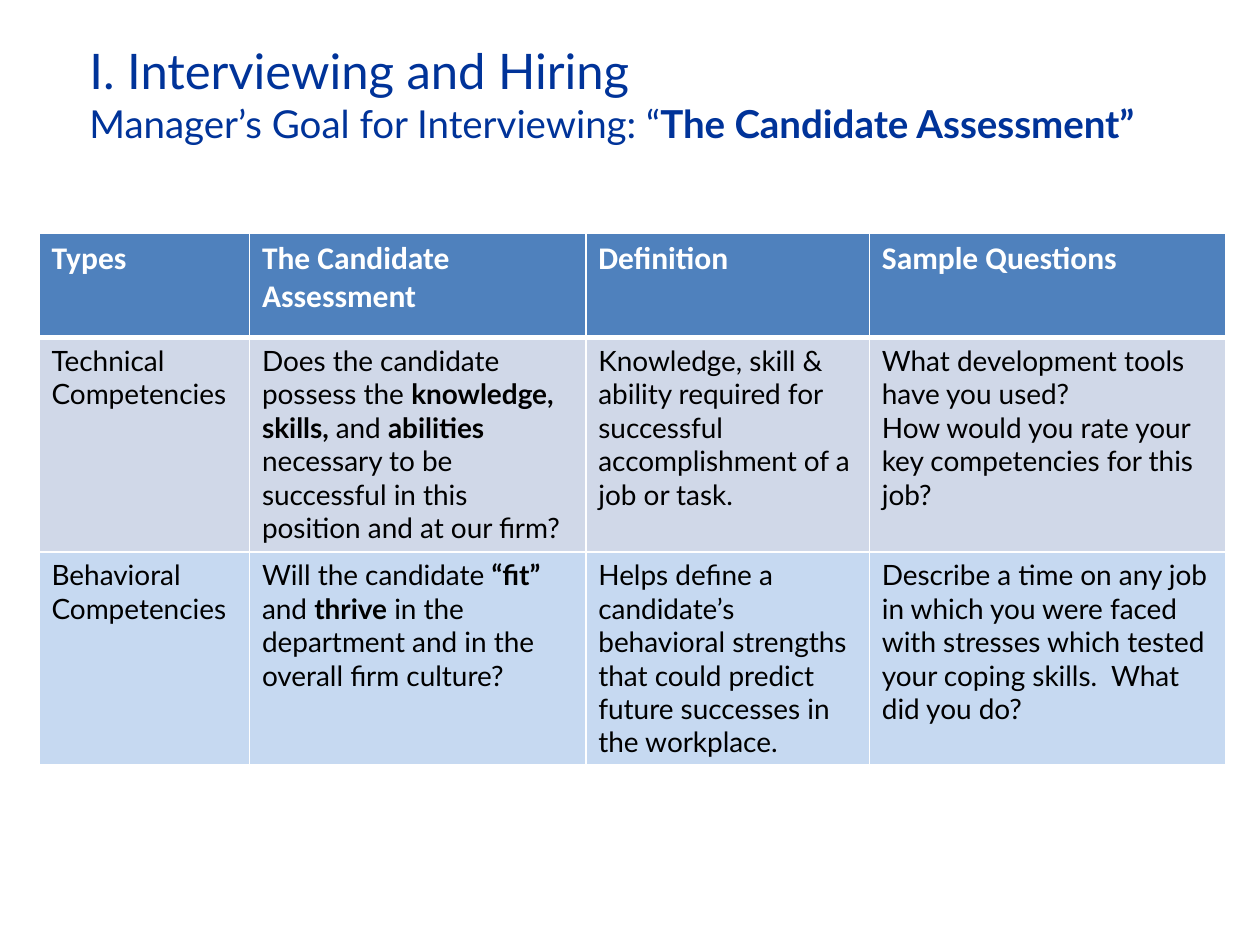
import lxml.etree
import pptx
import pptx.util
import pptx.dml.color
import pptx.enum.text
import pptx.oxml

Inches, Pt = pptx.util.Inches, pptx.util.Pt
COLORS = {"title": "003399", "head": "4F81BD", "tech": "D0D8E8",
          "behave": "C6D9F1", "white": "FFFFFF", "black": "000000"}
RULE = ('<a:lnB xmlns:a="http://schemas.openxmlformats.org/drawingml/2006/main"'
        f' w="{Pt(3)}"><a:solidFill><a:srgbClr val="{COLORS["white"]}"/>'
        '</a:solidFill></a:lnB>')


def color(name):
    return pptx.dml.color.RGBColor.from_string(COLORS[name])


def write(para, text):
    """Fill a paragraph; parts between ** marks are bold."""
    for i, part in enumerate(text.split("**")):
        if part:
            run = para.add_run()
            run.text = part
            if i % 2:
                run.font.bold = True


deck = pptx.Presentation()
deck.slide_width, deck.slide_height = Inches(10), Inches(7.5)
slide = deck.slides.add_slide(deck.slide_layouts[5])

# Title
title = slide.shapes.title
title.left, title.top = Inches(0.61), Inches(-0.1)
title.width, title.height = Inches(9), Inches(1.68)
frame = title.text_frame
frame.auto_size = pptx.enum.text.MSO_AUTO_SIZE.NONE
frame.vertical_anchor = pptx.enum.text.MSO_ANCHOR.MIDDLE
para = frame.paragraphs[0]
para.alignment = pptx.enum.text.PP_ALIGN.LEFT
para.font.name = "Lato"
para.font.color.rgb = color("title")
write(para, "I. Interviewing and Hiring ")
para.add_line_break()
write(para, "Manager’s Goal for Interviewing: “**The Candidate Assessment”**")
for i, run in enumerate(para.runs):
    run.font.size = Pt(22 if i else 28)

# Assessment table: fill, font, size, text colour, bold, cells
rows = [
    ("head", "Calibri", 18, "white", True,
     ["Types", "The Candidate Assessment", "Definition", "Sample Questions"]),
    ("tech", "Lato", 16, "black", False,
     ["Technical Competencies",
      "Does the candidate possess the **knowledge, skills, **and **abilities **"
      "necessary to be successful in this position and at our firm?",
      "Knowledge, skill & ability required for successful accomplishment "
      "of a job or task.",
      "What development tools have you used?\n"
      "How would you rate your key competencies for this job?"]),
    ("behave", "Lato", 16, "black", False,
     ["Behavioral Competencies",
      "Will the candidate **“fit” **and **thrive** in the department and in "
      "the overall firm culture?",
      "Helps define a candidate’s behavioral strengths that could predict "
      "future successes in the workplace.",
      "Describe a time on any job in which you were faced with stresses "
      "which tested your coping skills.  What did you do?"]),
]
widths = [1.67, 2.67, 2.25, 2.83]
heights = [0.83, 1.7, 1.68]
table = slide.shapes.add_table(
    len(rows), len(widths), Inches(0.31), Inches(1.85),
    Inches(sum(widths)), Inches(sum(heights))).table
for col, width in zip(table.columns, widths):
    col.width = Inches(width)
for r, (fill, font, size, ink, bold, texts) in enumerate(rows):
    table.rows[r].height = Inches(heights[r])
    for c, text in enumerate(texts):
        cell = table.cell(r, c)
        cell.fill.solid()
        cell.fill.fore_color.rgb = color(fill)
        if fill == "head":
            cell.fill._xPr.insert(0, pptx.oxml.parse_xml(RULE))
        for i, line in enumerate(text.split("\n")):
            frame = cell.text_frame
            para = frame.add_paragraph() if i else frame.paragraphs[0]
            para.font.name = font
            para.font.size = Pt(size)
            para.font.bold = bold
            para.font.color.rgb = color(ink)
            write(para, line)

deck.save("out.pptx")
